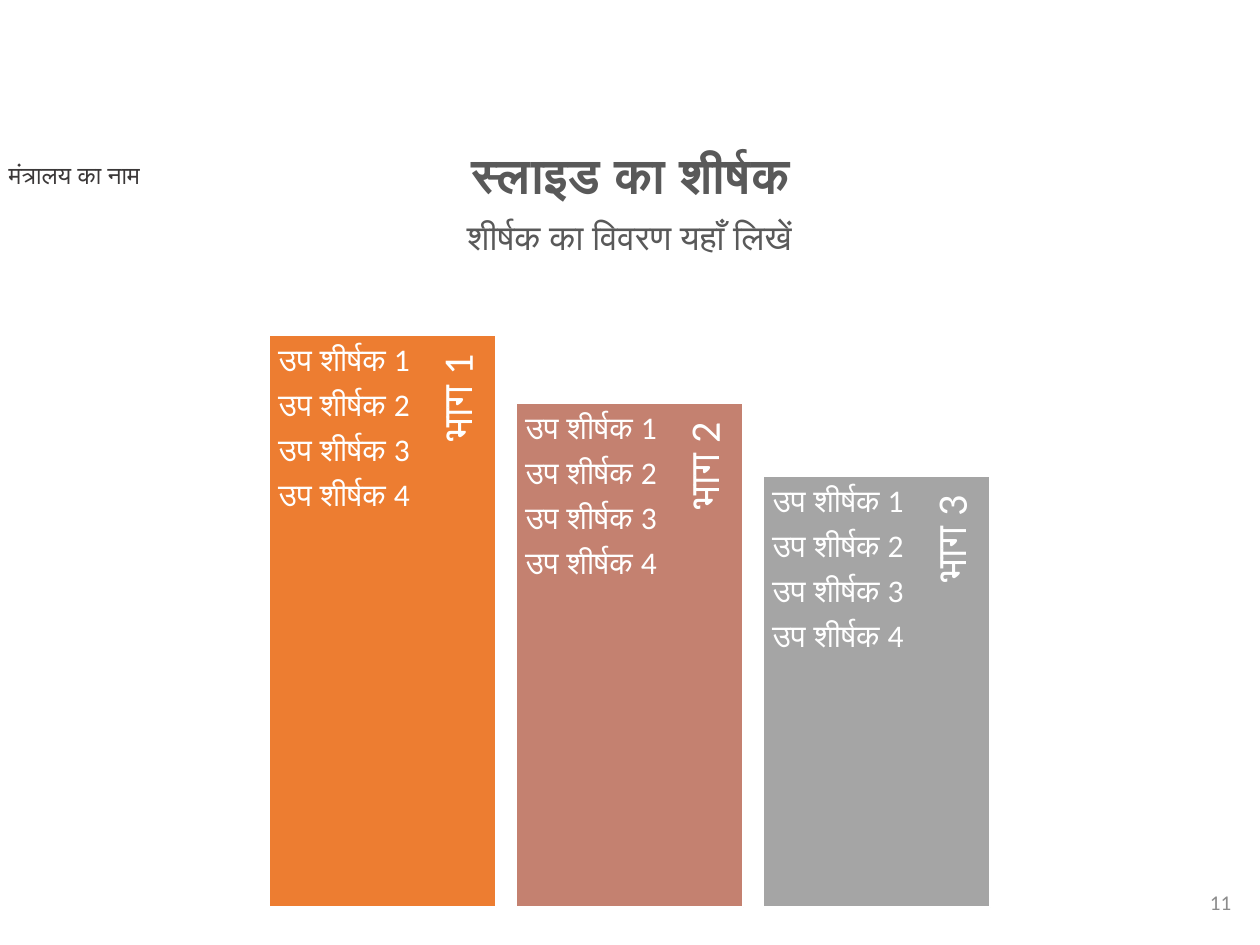
"""Build a slide with three descending columns of Hindi subheadings."""
from pptx import Presentation, util as u
from pptx.dml.color import RGBColor
from pptx.enum import shapes, text

LEFT, MID, RIGHT = text.PP_ALIGN.LEFT, text.PP_ALIGN.CENTER, text.PP_ALIGN.RIGHT
TOP, CORE = text.MSO_ANCHOR.TOP, text.MSO_ANCHOR.MIDDLE
PAD = (0.1, 0.05, 0.1, 0.05)

HEADS = [
    ("मंत्रालय का नाम", (-0.03, 1.22, 2.18, 0.34), 14, "3B3838", LEFT, TOP, False, 1),
    ("11", (7.62, 6.96, 2.25, 0.4), 12, "8C8C8C", RIGHT, CORE, False, 1),
    ("शीर्षक का विवरण यहाँ लिखें", (1.46, 1.7, 7.07, 0.63), 20, "595959", MID, TOP, False, 0.9),
    ("स्लाइड का शीर्षक", (1.86, 1.15, 6.29, 0.47), 28, "595959", MID, TOP, True, 0.9),
]
SUBS = [f"उप शीर्षक {n}" for n in range(1, 5)]
BARS = [("भाग 1", 2.66, "ED7D31"), ("भाग 2", 3.2, "C48170"), ("भाग 3", 3.78, "A5A5A5")]
X, STEP, WIDE, BASE = 2.14, 1.96, 1.8, 7.2
TAG_X, TAG_H = 1.52, 0.47


def color(code):
    return RGBColor.from_string(code)


def put(item, vals):
    for key, val in vals.items():
        setattr(item, key, val)


def write(slide, lines, box, size, code, align=LEFT, anchor=TOP, bold=False,
          space=0.9, after=0, pad=PAD, turn=0):
    shape = slide.shapes.add_textbox(*map(u.Inches, box))
    shape.rotation = turn
    frame = shape.text_frame
    sides = ("margin_left", "margin_top", "margin_right", "margin_bottom")
    put(frame, dict(zip(sides, map(u.Inches, pad)), word_wrap=True, vertical_anchor=anchor))
    frame.text = "\n".join(lines)
    for para in frame.paragraphs:
        put(para, dict(alignment=align, line_spacing=space, space_after=u.Pt(after)))
        for run in para.runs:
            put(run.font, dict(name="Calibri", size=u.Pt(size), bold=bold))
            run.font.color.rgb = color(code)


def draw_bar(slide, left, top, code):
    box = (left, top, WIDE, BASE - top)
    bar = slide.shapes.add_shape(shapes.MSO_SHAPE.RECTANGLE, *map(u.Inches, box))
    bar.shadow.inherit = False
    bar.fill.solid()
    bar.fill.fore_color.rgb = color(code)
    bar.line.color.rgb = color("FFFFFF")
    bar.line.width = u.Pt(1)


def main():
    deck = Presentation()
    put(deck, dict(slide_width=u.Inches(10), slide_height=u.Inches(7.5)))
    slide = deck.slides.add_slide(deck.slide_layouts[6])
    for head, box, size, code, align, anchor, bold, space in HEADS:
        write(slide, [head], box, size, code, align, anchor, bold, space)
    for i, (name, top, code) in enumerate(BARS):
        left, tall = X + i * STEP, BASE - top
        draw_bar(slide, left, top, code)
        span = tall * 0.9
        tag = (left + TAG_X - span / 2, top + span / 2 - TAG_H / 2, span, TAG_H)
        write(slide, [name], tag, 24, "FFFFFF", RIGHT, CORE,
              pad=(0.1, 0, 0.15, 0.03), turn=270)
        write(slide, SUBS, (left, top, 1.28, tall), 18, "FFFFFF",
              after=6.3, pad=(0.07,) * 4)
    deck.save("out.pptx")


if __name__ == "__main__":
    main()
